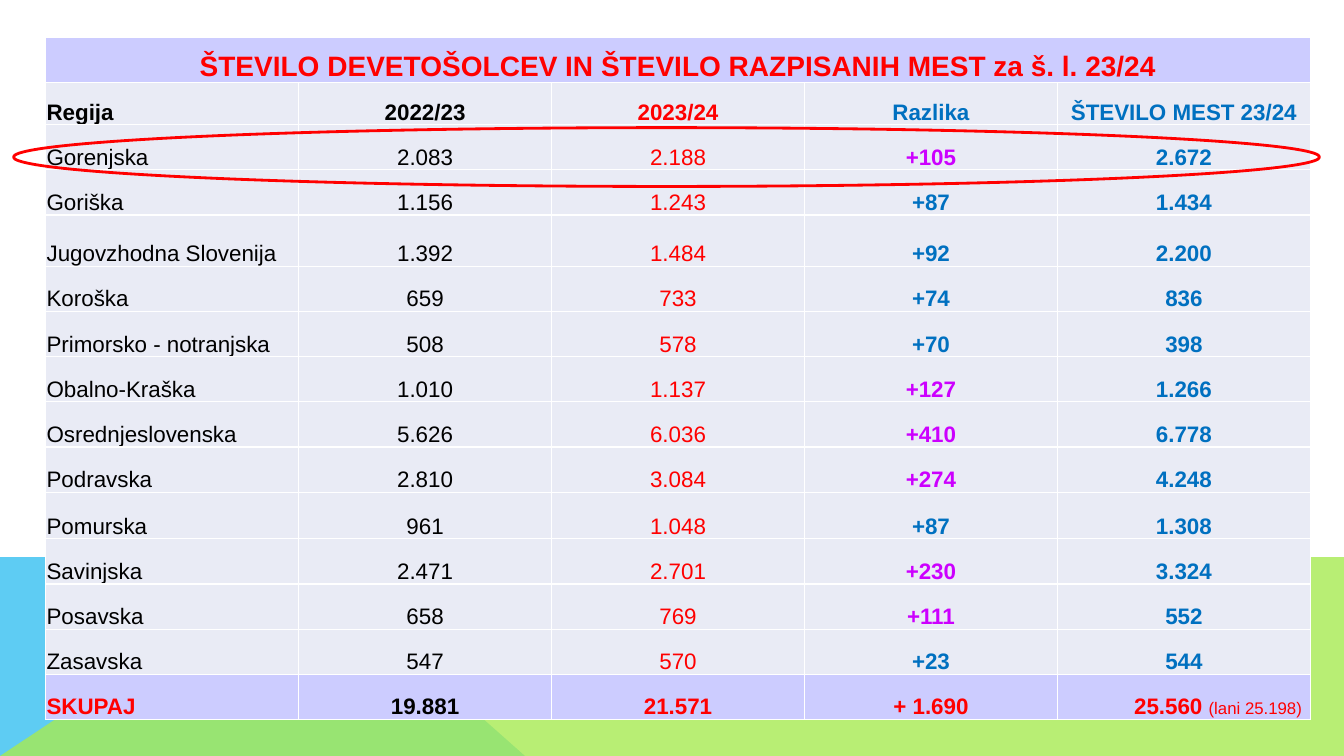
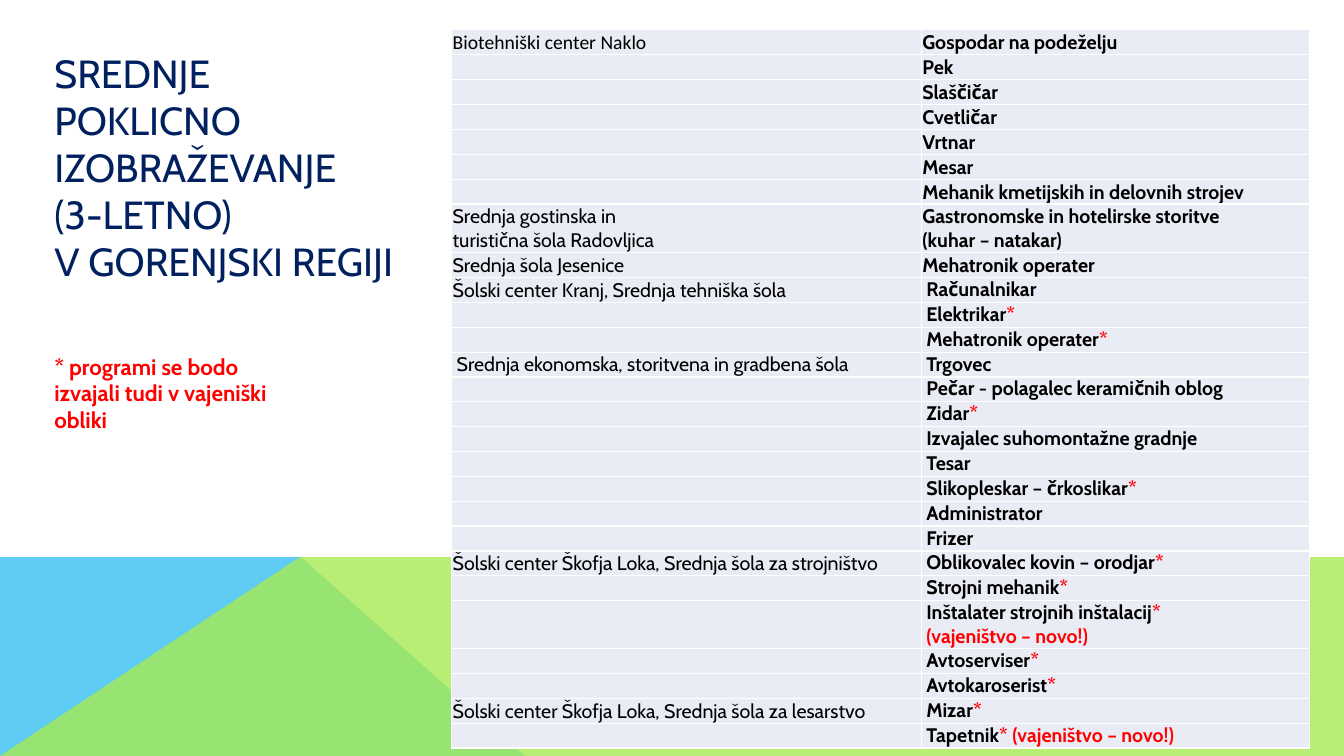
from lxml.etree import SubElement
from pptx import Presentation
from pptx.dml.color import RGBColor
from pptx.enum.shapes import MSO_SHAPE
from pptx.enum.text import MSO_ANCHOR, MSO_AUTO_SIZE, PP_ALIGN
from pptx.oxml.ns import qn
from pptx.util import Pt

COLORS = {
    "black": "000000", "red": "FF0000", "blue": "0070C0", "magenta": "CC00FF",
    "navy": "002060", "cell": "E9EBF5", "accent_cell": "CCCCFF",
    "sky": "5ECCF3", "green": "A7EA52",
}
WIDTH, HEIGHT = 960, 540

# Content: pupils and places by region
PLACES_TITLE = "ŠTEVILO DEVETOŠOLCEV IN ŠTEVILO RAZPISANIH MEST za š. l. 23/24"
HEADER = ("Regija", "2022/23", "2023/24", "Razlika", "ŠTEVILO MEST 23/24")
REGIONS = [
    ("Gorenjska", "2.083", "2.188", "+105", "2.672"),
    ("Goriška", "1.156", "1.243", "+87", "1.434"),
    ("Jugovzhodna Slovenija", "1.392", "1.484", "+92", "2.200"),
    ("Koroška", "659", "733", "+74", "836"),
    ("Primorsko - notranjska", "508", "578", "+70", "398"),
    ("Obalno-Kraška", "1.010", "1.137", "+127", "1.266"),
    ("Osrednjeslovenska", "5.626", "6.036", "+410", "6.778"),
    ("Podravska", "2.810", "3.084", "+274", "4.248"),
    ("Pomurska", "961", "1.048", "+87", "1.308"),
    ("Savinjska", "2.471", "2.701", "+230", "3.324"),
    ("Posavska", "658", "769", "+111", "552"),
    ("Zasavska", "547", "570", "+23", "544"),
]
TOTAL = ("SKUPAJ", "19.881", "21.571", "+ 1.690", "25.560 ")
LAST_YEAR = "(lani 25.198)"
ROW_HEIGHT = 32.25
SPECIAL_HEIGHTS = {1: 30, 4: 36.8, 10: 33.4}

# Content: (school, font, school inset, programme inset, programmes)
# Text from an asterisk to the end of its cell is red.
SCHOOLS = [
    ("Biotehniški center Naklo", "Calibri", False, False,
     ["Gospodar na podeželju", "Pek", "Slaščičar", "Cvetličar", "Vrtnar", "Mesar",
      "Mehanik kmetijskih in delovnih strojev"]),
    ("Srednja gostinska in\nturistična šola Radovljica", "Cabin", False, False,
     ["Gastronomske in hotelirske storitve\n(kuhar – natakar)"]),
    ("Srednja šola Jesenice", "Cabin", False, False, ["Mehatronik operater"]),
    ("Šolski center Kranj, Srednja tehniška šola", "Cabin", False, True,
     ["Računalnikar", "Elektrikar*", "Mehatronik operater*"]),
    ("Srednja ekonomska, storitvena in gradbena šola", "Cabin", True, True,
     ["Trgovec", "Pečar - polagalec keramičnih oblog", "Zidar*",
      "Izvajalec suhomontažne gradnje", "Tesar", "Slikopleskar – črkoslikar*",
      "Administrator", "Frizer"]),
    ("Šolski center Škofja Loka, Srednja šola za strojništvo", "Cabin", False, True,
     ["Oblikovalec kovin – orodjar*", "Strojni mehanik*",
      "Inštalater strojnih inštalacij*\n(vajeništvo – novo!)",
      "Avtoserviser*", "Avtokaroserist*"]),
    ("Šolski center Škofja Loka, Srednja šola za lesarstvo", "Cabin", False, True,
     ["Mizar*", "Tapetnik* (vajeništvo – novo!)"]),
]
SCHOOL_TITLE = ["SREDNJE POKLICNO", "IZOBRAŽEVANJE", "(3-LETNO)", "V GORENJSKI REGIJI"]
NOTE = "* programi se bodo izvajali tudi v vajeniški obliki"


def rgb(name):
    return RGBColor.from_string(COLORS[name])


def add_run(p, text, size, font, color, bold=False):
    r = p.add_run()
    r.text = text
    r.font.size, r.font.name, r.font.bold = Pt(size), font, bold
    r.font.color.rgb = rgb(color)


def style_cell(cell, fill="cell", inset=False):
    cell.fill.solid()
    cell.fill.fore_color.rgb = rgb(fill)
    cell.margin_left = cell.margin_right = Pt(3.6 if inset else 0.72)
    cell.margin_top, cell.margin_bottom = Pt(0 if inset else 0.72), Pt(0)
    cell.vertical_anchor = MSO_ANCHOR.TOP if inset else MSO_ANCHOR.BOTTOM


def add_table(slide, left, top, widths, heights):
    tbl = slide.shapes.add_table(len(heights), len(widths), Pt(left), Pt(top),
                                 Pt(sum(widths)), Pt(sum(heights))).table
    tbl.horz_banding = False
    for col, width in zip(tbl.columns, widths):
        col.width = Pt(width)
    for row, height in zip(tbl.rows, heights):
        row.height = Pt(height)
    return tbl


def add_backdrop(prs, slide):
    """Draw the bottom bands and move them to the slide master."""
    top = 397.6
    bands = [
        ("sky", [(0, HEIGHT), (0, top), (214.6, top), (375, HEIGHT)], None),
        ("green", [(0, HEIGHT), (214, top), (WIDTH, top), (WIDTH, HEIGHT)], "80000"),
    ]
    for i, (color, points, alpha) in enumerate(bands):
        builder = slide.shapes.build_freeform(*points[0], scale=Pt(1))
        builder.add_line_segments(points[1:], close=True)
        sp = builder.convert_to_shape()
        sp.shadow.inherit = False
        sp.fill.solid()
        sp.fill.fore_color.rgb = rgb(color)
        sp.line.fill.background()
        if alpha:
            clr = sp.element.spPr.find(qn("a:solidFill"))[0]
            SubElement(clr, qn("a:alpha"), val=alpha)
        prs.slide_master.shapes.element.insert(2 + i, sp.element)


def region_style(col, is_header, is_total, text):
    """Return colour and weight for one cell of the places table."""
    if is_total:
        return ("black" if col == 1 else "red"), True
    color = ("black", "black", "red", "blue", "blue")[col]
    if col == 3 and not is_header and int(text) > 100:
        color = "magenta"
    return color, is_header or col > 2


def build_places(slide):
    rows = [HEADER, *REGIONS, TOTAL]
    heights = [SPECIAL_HEIGHTS.get(i, ROW_HEIGHT) for i in range(len(rows) + 1)]
    tbl = add_table(slide, 32.6, 26.9, [180.7] * len(HEADER), heights)

    # Title row
    title = tbl.cell(0, 0)
    title.merge(tbl.cell(0, len(HEADER) - 1))
    style_cell(title, "accent_cell")
    p = title.text_frame.paragraphs[0]
    p.alignment = PP_ALIGN.CENTER
    add_run(p, PLACES_TITLE, 20, "Arial", "red", True)

    # Header, regions and total
    for i, row in enumerate(rows):
        is_total = row is TOTAL
        for col, text in enumerate(row):
            cell = tbl.cell(i + 1, col)
            style_cell(cell, "accent_cell" if is_total else "cell")
            p = cell.text_frame.paragraphs[0]
            p.alignment = PP_ALIGN.CENTER if col else PP_ALIGN.LEFT
            color, bold = region_style(col, row is HEADER, is_total, text)
            add_run(p, text, 16, "Arial", color, bold)
    p.alignment = PP_ALIGN.RIGHT
    cell.margin_right = Pt(6)
    add_run(p, LAST_YEAR, 12, "Arial", "red")

    # Ring around the first region
    ring = slide.shapes.add_shape(MSO_SHAPE.OVAL, Pt(9.6), Pt(91.2), Pt(933), Pt(42))
    ring.shadow.inherit = False
    ring.fill.background()
    ring.line.color.rgb = rgb("red")
    ring.line.width = Pt(2)


def write_cell(cell, text, font, bold, inset):
    style_cell(cell, inset=inset)
    tf = cell.text_frame
    starred = False
    for i, line in enumerate(text.split("\n")):
        p = tf.add_paragraph() if i else tf.paragraphs[0]
        plain, star, rest = line.partition("*")
        if plain:
            add_run(p, plain, 14, font, "red" if starred else "black", bold)
        if star:
            starred = True
            add_run(p, star + rest, 14, font, "red", bold)
        if not line:
            SubElement(p._p, qn("a:endParaRPr"), sz="1200")


def build_schools(slide):
    # Title
    title = slide.shapes.title
    title.left, title.top, title.width, title.height = Pt(31.7), Pt(10.8), Pt(260), Pt(216.7)
    tf = title.text_frame
    tf.word_wrap, tf.auto_size = True, MSO_AUTO_SIZE.NONE
    tf.vertical_anchor = MSO_ANCHOR.MIDDLE
    for i, line in enumerate(SCHOOL_TITLE):
        p = tf.add_paragraph() if i else tf.paragraphs[0]
        p.alignment = PP_ALIGN.LEFT
        add_run(p, line, 28, "Cabin", "navy")

    # Schools and programmes
    rows = [(school if i == 0 else "", font, school_inset and i == 0, inset, programme)
            for school, font, school_inset, inset, programmes in SCHOOLS
            for i, programme in enumerate(programmes)]
    heights = [34.3 if "\n" in row[-1] else 17.75 for row in rows]
    tbl = add_table(slide, 322.6, 21.3, [335.5, 277.2], heights)
    tbl.first_row = False
    for i, (school, font, school_inset, inset, programme) in enumerate(rows):
        write_cell(tbl.cell(i, 0), school, font, False, school_inset)
        write_cell(tbl.cell(i, 1), programme, "Cabin", True, inset)

    # Note
    tf = slide.shapes.add_textbox(Pt(31.7), Pt(248.4), Pt(195), Pt(65.5)).text_frame
    tf.word_wrap = True
    add_run(tf.paragraphs[0], NOTE, 16, "Cabin", "red", True)


def main():
    prs = Presentation()
    prs.slide_width, prs.slide_height = Pt(WIDTH), Pt(HEIGHT)
    title_only, blank = prs.slide_layouts[5], prs.slide_layouts[6]
    places = prs.slides.add_slide(blank)
    add_backdrop(prs, places)
    build_places(places)
    build_schools(prs.slides.add_slide(title_only))
    prs.save("out.pptx")


if __name__ == "__main__":
    main()
